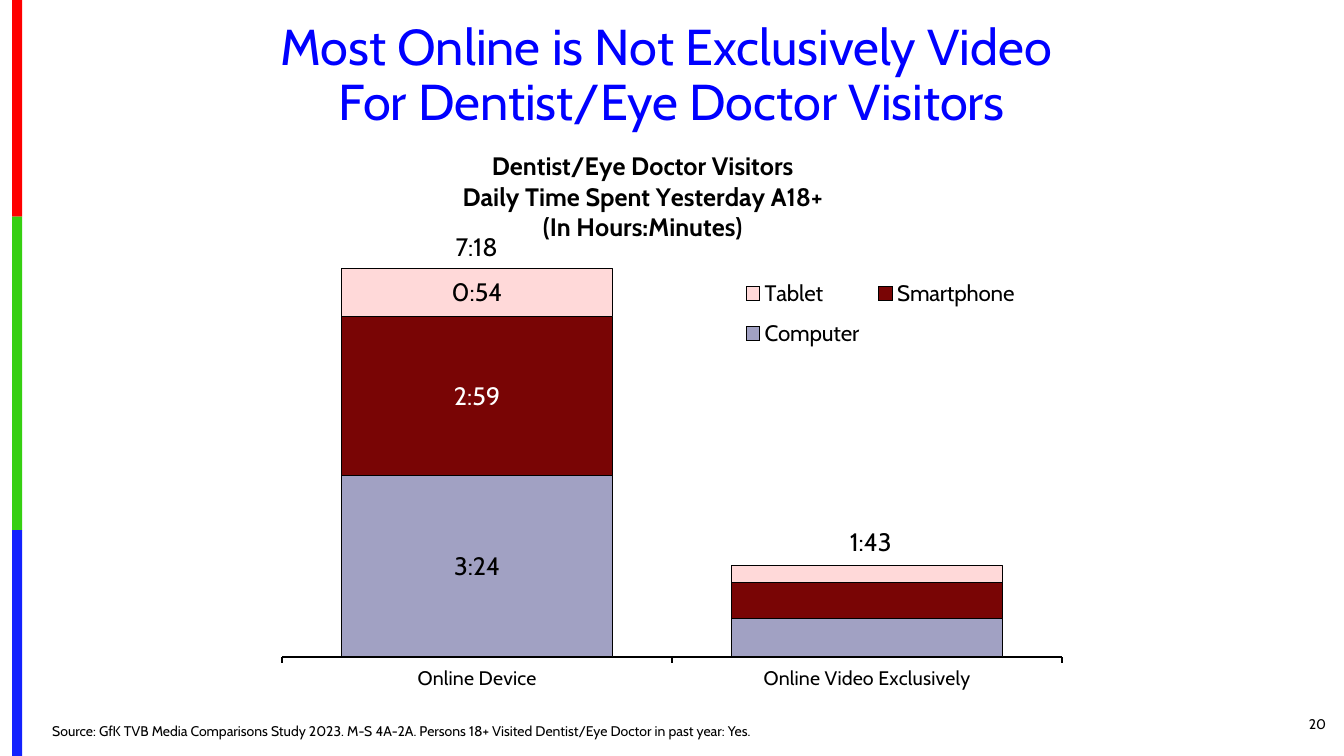
from dataclasses import dataclass

from lxml.etree import SubElement
from pptx import Presentation
from pptx.chart.chart import Chart
from pptx.chart.data import CategoryChartData
from pptx.dml.color import RGBColor
from pptx.enum.chart import XL_CHART_TYPE, XL_LEGEND_POSITION, XL_TICK_LABEL_POSITION, XL_TICK_MARK
from pptx.enum.shapes import MSO_SHAPE
from pptx.enum.text import MSO_ANCHOR, PP_ALIGN
from pptx.oxml.ns import qn
from pptx.slide import Slide
from pptx.util import Inches, Pt

FONT = "Cabin"
CLOCK = "h:mm;@"
BLACK = RGBColor(0x00, 0x00, 0x00)
WHITE = RGBColor(0xFF, 0xFF, 0xFF)
BLUE = RGBColor(0x00, 0x00, 0xFF)
BAND_RED = RGBColor(0xFE, 0x00, 0x00)
BAND_GREEN = RGBColor(0x36, 0xCF, 0x12)
BAND_BLUE = RGBColor(0x13, 0x22, 0xFE)
LILAC = RGBColor(0xA1, 0xA1, 0xC3)
MAROON = RGBColor(0x79, 0x05, 0x05)
PINK = RGBColor(0xFF, 0xD9, 0xD9)


@dataclass
class Band:
    height: float
    fill: RGBColor


@dataclass
class Label:
    lines: list[str]
    left: float
    top: float
    width: float
    height: float
    size: int
    ink: RGBColor = BLACK
    align: PP_ALIGN = PP_ALIGN.LEFT
    anchor: MSO_ANCHOR = MSO_ANCHOR.TOP
    wrap: bool = True
    pitch: float = 1.0


@dataclass
class Device:
    name: str
    minutes: list[int]
    fill: RGBColor
    ink: RGBColor


BANDS = [Band(2.15, BAND_RED), Band(3.11, BAND_GREEN), Band(2.24, BAND_BLUE)]

LABELS = [
    Label(["20"], 12.17, 6.98, 1.08, 0.4, 10, align=PP_ALIGN.RIGHT, anchor=MSO_ANCHOR.MIDDLE),
    Label(["Source: GfK TVB Media Comparisons Study 2023. M-S 4A-2A. "
           "Persons 18+ Visited Dentist/Eye Doctor in past year: Yes."],
          0.42, 7.14, 10.67, 0.25, 10, anchor=MSO_ANCHOR.BOTTOM, pitch=0.9),
    Label(["Most Online is Not Exclusively Video ", "For Dentist/Eye Doctor Visitors"],
          0.25, 0.17, 12.83, 1.19, 36, BLUE, PP_ALIGN.CENTER, pitch=0.9),
    Label(["1:43"], 8.33, 5.17, 0.71, 0.4, 18, wrap=False),
    Label(["7:18"], 4.42, 2.25, 0.71, 0.4, 18, wrap=False),
]

GROUPS = ["Online Device", "Online Video Exclusively"]
HEADING = ["Dentist/Eye Doctor Visitors", "Daily Time Spent Yesterday A18+", "(In Hours:Minutes)"]
DEVICES = [
    Device("Computer", [204, 43], LILAC, BLACK),
    Device("Smartphone", [179, 41], MAROON, WHITE),
    Device("Tablet", [55, 19], PINK, BLACK),
]


def draw_bands(slide: Slide) -> None:
    top = 0.0
    for band in BANDS:
        shape = slide.shapes.add_shape(
            MSO_SHAPE.RECTANGLE, Inches(0.12), Inches(top), Inches(0.1), Inches(band.height))
        shape.shadow.inherit = False
        shape.fill.solid()
        shape.fill.fore_color.rgb = band.fill
        shape.line.fill.background()
        top += band.height


def draw_label(slide: Slide, label: Label) -> None:
    box = slide.shapes.add_textbox(
        Inches(label.left), Inches(label.top), Inches(label.width), Inches(label.height))
    frame = box.text_frame
    frame.word_wrap = label.wrap
    frame.vertical_anchor = label.anchor
    frame.text = "\n".join(label.lines)
    for line in frame.paragraphs:
        line.alignment = label.align
        line.line_spacing = label.pitch
        line.font.name = FONT
        line.font.size = Pt(label.size)
        line.font.color.rgb = label.ink


def place(parent, index: int, **places: float) -> None:
    for old in parent.findall(qn("c:layout")):
        parent.remove(old)
    layout = SubElement(parent, qn("c:layout"))
    parent.insert(index, layout)
    manual = SubElement(layout, qn("c:manualLayout"))
    if "w" in places and index == 0:
        SubElement(manual, qn("c:layoutTarget")).set("val", "inner")
    for mode in ("xMode", "yMode"):
        SubElement(manual, qn(f"c:{mode}")).set("val", "edge")
    for key, value in places.items():
        SubElement(manual, qn(f"c:{key}")).set("val", str(value))


def style_bars(chart: Chart) -> None:
    plot = chart.plots[0]
    plot.gap_width = 44
    plot.overlap = 100
    plot.vary_by_categories = False
    for device, bars in zip(DEVICES, plot.series):
        bars.format.fill.solid()
        bars.format.fill.fore_color.rgb = device.fill
        bars.format.line.color.rgb = BLACK
        bars.format.line.width = Pt(0.75)
        font = bars.points[0].data_label.font
        font.name = FONT
        font.size = Pt(18)
        font.color.rgb = device.ink
        labels = bars.data_labels
        labels.show_value = False
        labels.number_format = CLOCK
        labels.number_format_is_linked = False
        point = labels._element.find(qn("c:dLbl"))
        form = SubElement(point, qn("c:numFmt"))
        form.set("formatCode", CLOCK)
        form.set("sourceLinked", "0")
        point.find(qn("c:idx")).addnext(form)


def style_axes(chart: Chart) -> None:
    base = chart.category_axis
    base.major_tick_mark = XL_TICK_MARK.OUTSIDE
    base.tick_label_position = XL_TICK_LABEL_POSITION.LOW
    base.has_major_gridlines = False
    base.format.line.color.rgb = BLACK
    base.format.line.width = Pt(1.5)
    base.tick_labels.font.size = Pt(14)
    scale = chart.value_axis
    scale.minimum_scale = 0
    scale.maximum_scale = 0.35
    scale.has_major_gridlines = False
    scale.visible = False


def style_text(chart: Chart) -> None:
    chart.has_title = True
    title = chart.chart_title
    title.text_frame.text = "\n".join(HEADING)
    for line in title.text_frame.paragraphs:
        line.font.name = FONT
        line.font.size = Pt(18)
        line.font.bold = True
        line.font.color.rgb = BLACK
    place(title._element, 1, x=0.3, y=0.1)

    chart.has_legend = True
    legend = chart.legend
    legend.position = XL_LEGEND_POSITION.RIGHT
    legend.include_in_layout = False
    legend.font.name = FONT
    legend.font.size = Pt(16)
    legend.font.color.rgb = BLACK
    place(legend._element, 1, x=0.61, y=0.29, w=0.33, h=0.15)


def draw_chart(slide: Slide) -> None:
    data = CategoryChartData(number_format=CLOCK)
    data.categories = GROUPS
    for device in DEVICES:
        data.add_series(device.name, [round(count / 1440, 6) for count in device.minutes])
    chart = slide.shapes.add_chart(
        XL_CHART_TYPE.COLUMN_STACKED, Inches(1.92), Inches(0.83), Inches(8.79), Inches(6.25),
        data).chart
    chart.font.name = FONT
    chart.font.size = Pt(10)
    chart.font.color.rgb = BLACK
    style_bars(chart)
    style_axes(chart)
    style_text(chart)
    place(chart._chartSpace.find(f".//{qn('c:plotArea')}"), 0, x=0.1, y=0.2, w=0.88, h=0.71)


def main() -> None:
    deck = Presentation()
    deck.slide_width = Inches(13.33)
    deck.slide_height = Inches(7.5)
    slide = deck.slides.add_slide(deck.slide_layouts[6])
    draw_bands(slide)
    draw_chart(slide)
    for label in LABELS:
        draw_label(slide, label)
    deck.save("out.pptx")


if __name__ == "__main__":
    main()
